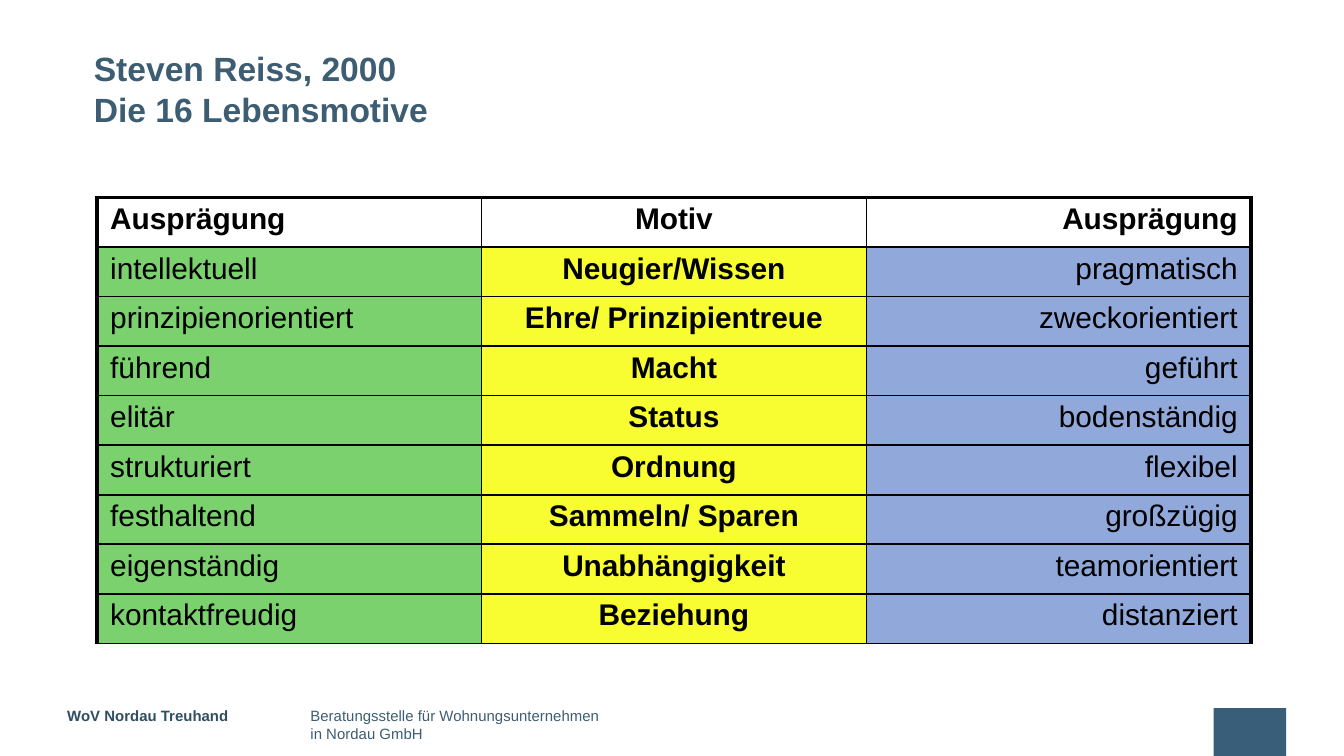
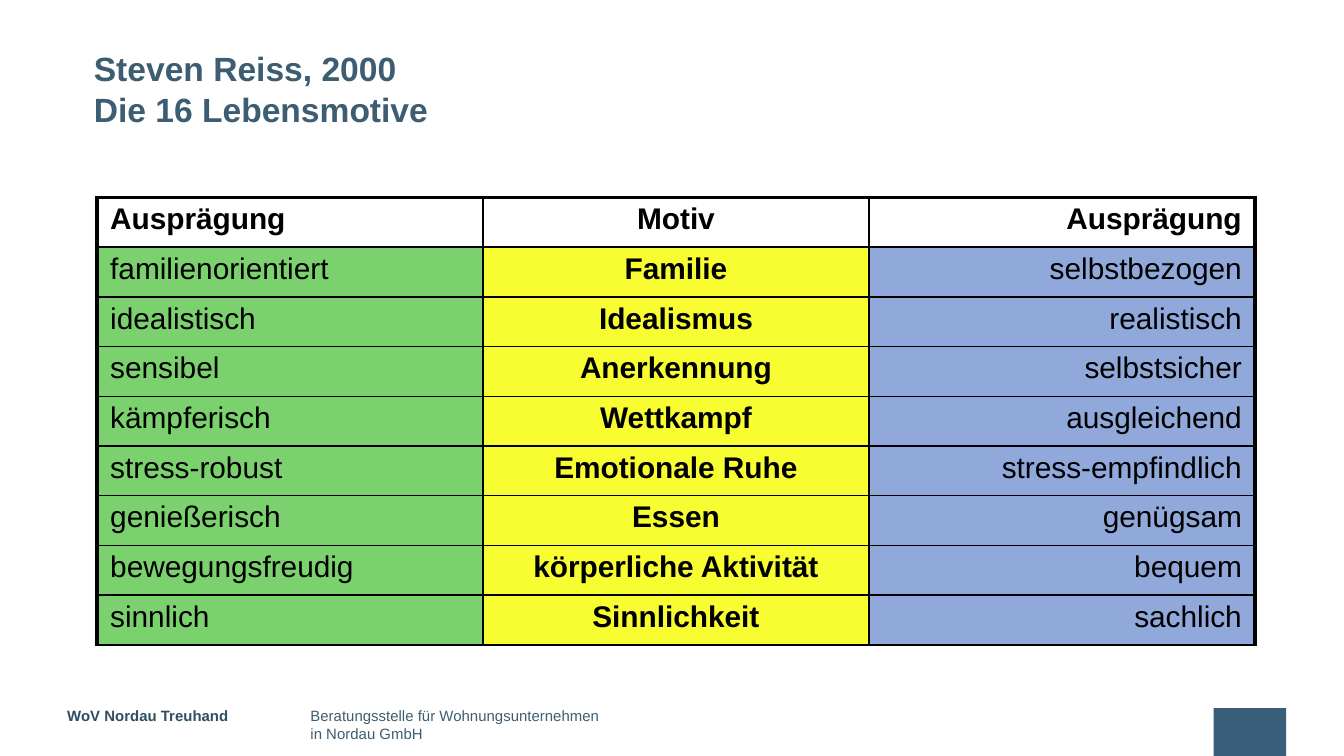
from lxml.etree import SubElement
from pptx import Presentation
from pptx.dml.color import RGBColor
from pptx.enum.shapes import MSO_SHAPE as SHAPE
from pptx.enum.text import MSO_AUTO_SIZE as AUTO, PP_ALIGN as ALIGN
from pptx.oxml.ns import qn
from pptx.util import Inches, Pt

# Content
TITLE = ["Steven Reiss, 2000", "Die 16 Lebensmotive"]
COMPANY = ["WoV Nordau Treuhand"]
COMPANY_LONG = ["Beratungsstelle für Wohnungsunternehmen\nin Nordau GmbH"]
HEADER = ("Ausprägung", "Motiv", "Ausprägung")
SLIDES = [
    {"width": 8.59, "height": 3.32, "motives": [
        ("intellektuell", "Neugier/Wissen", "pragmatisch"),
        ("prinzipienorientiert", "Ehre/ Prinzipientreue", "zweckorientiert"),
        ("führend", "Macht", "geführt"),
        ("elitär", "Status", "bodenständig"),
        ("strukturiert", "Ordnung", "flexibel"),
        ("festhaltend", "Sammeln/ Sparen", "großzügig"),
        ("eigenständig", "Unabhängigkeit", "teamorientiert"),
        ("kontaktfreudig", "Beziehung", "distanziert"),
    ]},
    {"width": 8.62, "height": 3.33, "motives": [
        ("familienorientiert", "Familie", "selbstbezogen"),
        ("idealistisch", "Idealismus", "realistisch"),
        ("sensibel", "Anerkennung", "selbstsicher"),
        ("kämpferisch", "Wettkampf", "ausgleichend"),
        ("stress-robust", "Emotionale Ruhe", "stress-empfindlich"),
        ("genießerisch", "Essen", "genügsam"),
        ("bewegungsfreudig", "körperliche Aktivität", "bequem"),
        ("sinnlich", "Sinnlichkeit", "sachlich"),
    ]},
]

# Shared look
FONT = "Arial"
BLACK = RGBColor(0x00, 0x00, 0x00)
WHITE = RGBColor(0xFF, 0xFF, 0xFF)
BLOCK_BLUE = RGBColor(0x38, 0x5E, 0x7A)
TEXT_BLUE = RGBColor(0x3D, 0x5D, 0x72)
DARK_BLUE = RGBColor(0x2F, 0x4E, 0x61)
COLUMN_FILLS = [RGBColor(0x7B, 0xD1, 0x6D), RGBColor(0xF8, 0xFD, 0x31),
                RGBColor(0x91, 0xA8, 0xDB)]
COLUMN_ALIGNS = [ALIGN.LEFT, ALIGN.CENTER, ALIGN.RIGHT]
THICK, THIN = Pt(2.25), Pt(1)


def write(tf, paragraphs, size, color, bold=False, align=ALIGN.LEFT):
    for i, text in enumerate(paragraphs):
        p = tf.paragraphs[0] if i == 0 else tf.add_paragraph()
        p.alignment = align
        for j, line in enumerate(text.split("\n")):
            if j:
                # The break needs the text size too, or it stretches its line
                br = SubElement(p._p, qn("a:br"))
                SubElement(br, qn("a:rPr"), sz=str(size * 100))
            r = p.add_run()
            r.text = line
            r.font.color.rgb = color
            for name, value in {"name": FONT, "size": Pt(size), "bold": bold}.items():
                setattr(r.font, name, value)


def add_text(s, box, paragraphs, size, color, bold=False, inset=True):
    tf = s.shapes.add_textbox(*map(Inches, box)).text_frame
    tf.word_wrap = True
    if not inset:
        for side in ("left", "top", "right", "bottom"):
            setattr(tf, f"margin_{side}", 0)
    write(tf, paragraphs, size, color, bold)
    return tf


def add_footer(s):
    block = s.shapes.add_shape(SHAPE.RECTANGLE, *map(Inches, (9.03, 5.27, 0.54, 0.44)))
    block.shadow.inherit = False
    block.fill.solid()
    block.fill.fore_color.rgb = BLOCK_BLUE
    block.line.fill.background()
    add_text(s, (2.31, 5.26, 2.55, 0.3), COMPANY_LONG, 8, TEXT_BLUE, inset=False)
    add_text(s, (0.5, 5.26, 1.81, 0.3), COMPANY, 8, DARK_BLUE, bold=True, inset=False)


def set_borders(cell, widths):
    # Called before the fill is set, so the lines come first as the schema asks
    tc_pr = cell._tc.get_or_add_tcPr()
    for side, width in widths.items():
        ln = SubElement(tc_pr, qn(f"a:ln{side}"), w=str(width))
        fill = SubElement(ln, qn("a:solidFill"))
        SubElement(fill, qn("a:srgbClr"), val=str(BLACK))


def add_motive_table(s, width, height, motives):
    rows = [HEADER] + motives
    last = len(HEADER) - 1
    table = s.shapes.add_table(len(rows), len(HEADER), Inches(0.72), Inches(1.47),
                               Inches(width), Inches(height)).table
    for i, row in enumerate(rows):
        for j, text in enumerate(row):
            cell = table.cell(i, j)
            cell.margin_top = cell.margin_bottom = Inches(0.04)
            set_borders(cell, {"L": THICK if j == 0 else THIN,
                               "R": THICK if j == last else THIN,
                               "T": THICK if i == 0 else THIN,
                               "B": THIN})
            cell.fill.solid()
            cell.fill.fore_color.rgb = WHITE if i == 0 else COLUMN_FILLS[j]
            write(cell.text_frame, [text], 16, BLACK, i == 0 or j == 1, COLUMN_ALIGNS[j])


def main():
    prs = Presentation()
    prs.slide_width = Inches(10)
    prs.slide_height = prs.slide_width * 9 // 16
    for content in SLIDES:
        s = prs.slides.add_slide(prs.slide_layouts[6])
        add_footer(s)
        add_motive_table(s, **content)
        title = add_text(s, (0.6, 0.31, 2.71, 0.71), TITLE, 18, TEXT_BLUE, bold=True)
        title.word_wrap = False
        title.auto_size = AUTO.SHAPE_TO_FIT_TEXT
    prs.save("out.pptx")


if __name__ == "__main__":
    main()
